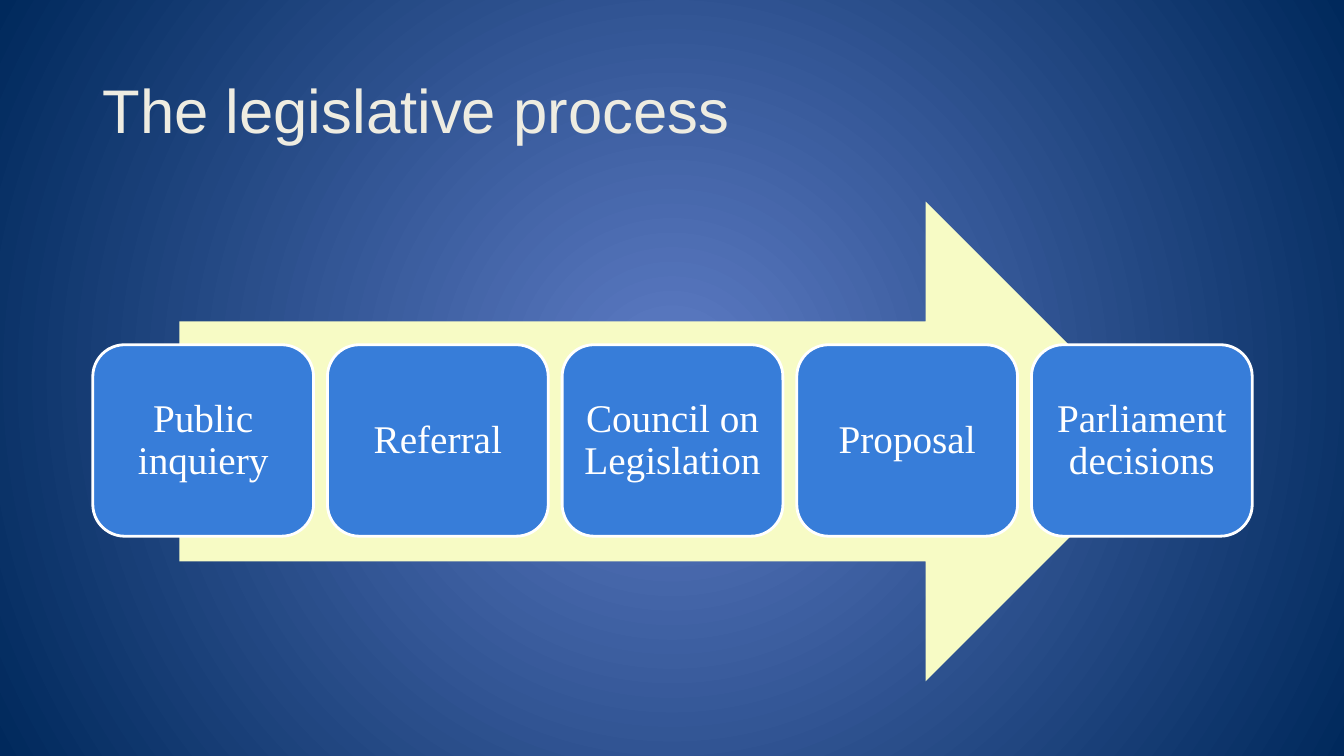
"""Build the slide showing the legislative process as steps along an arrow."""
from lxml import etree
from pptx import Presentation
from pptx.dml.color import RGBColor
from pptx.enum import shapes, text
from pptx.oxml import ns
from pptx.util import Inches, Pt

GLOW = RGBColor(0x5E, 0x7C, 0xC5)
NAVY = RGBColor(0x00, 0x29, 0x5C)
CREAM = RGBColor(0xEE, 0xEC, 0xE1)
PALE_YELLOW = RGBColor(0xF7, 0xFB, 0xC5)
STEP_BLUE = RGBColor(0x37, 0x7D, 0xD9)
WHITE = RGBColor(0xFF, 0xFF, 0xFF)

STEPS = ["Public inquiery", "Referral", "Council on Legislation", "Proposal", "Parliament decisions"]
LEFT, WIDTH = 0.92, 11.5
STEP_WIDTH, STEP_HEIGHT = 2.19, 1.9
PITCH = (WIDTH - STEP_WIDTH) / (len(STEPS) - 1)


def write(shape, wording, font_name, size, color, alignment):
    frame = shape.text_frame
    frame.word_wrap = True
    frame.vertical_anchor = text.MSO_ANCHOR.MIDDLE
    frame.text = wording
    para = frame.paragraphs[0]
    para.alignment = alignment
    para.line_spacing = 0.9
    span = para.runs[0]
    span.font.name = font_name
    span.font.size = Pt(size)
    span.font.color.rgb = color


def add_filled(preset, left, top, width, height, color):
    shape = page.shapes.add_shape(preset, Inches(left), Inches(top), Inches(width), Inches(height))
    shape.shadow.inherit = False
    shape.fill.solid()
    shape.fill.fore_color.rgb = color
    return shape


deck = Presentation()
deck.slide_width, deck.slide_height = Inches(13.33), Inches(7.5)
page = deck.slides.add_slide(deck.slide_layouts[6])

backdrop = page.background.fill
backdrop.gradient()
for stop, color, position in zip(backdrop.gradient_stops, (GLOW, NAVY), (0, 1)):
    stop.color.rgb = color
    stop.position = position
gradient = page.element.find(".//" + ns.qn("a:gradFill"))
gradient.remove(gradient.find(ns.qn("a:lin")))
circle = etree.SubElement(gradient, ns.qn("a:path"), {"path": "circle"})
etree.SubElement(circle, ns.qn("a:fillToRect"), dict.fromkeys("ltrb", "50000"))

title = page.shapes.add_textbox(Inches(LEFT), Inches(0.4), Inches(WIDTH), Inches(1.45))
write(title, "The legislative process", "Arial", 44, CREAM, text.PP_ALIGN.LEFT)

arrow = add_filled(shapes.MSO_SHAPE.RIGHT_ARROW, 1.78, 2, 9.78, 4.76, PALE_YELLOW)
arrow.line.fill.background()

for index, step in enumerate(STEPS):
    box = add_filled(shapes.MSO_SHAPE.ROUNDED_RECTANGLE, LEFT + index * PITCH, 3.42,
                     STEP_WIDTH, STEP_HEIGHT, STEP_BLUE)
    box.line.color.rgb = WHITE
    box.line.width = Pt(2)
    frame = box.text_frame
    frame.margin_left = frame.margin_right = Inches(0.11)
    frame.margin_top = frame.margin_bottom = Inches(0.11)
    write(box, step, "Times New Roman", 28, WHITE, text.PP_ALIGN.CENTER)

deck.save("out.pptx")
